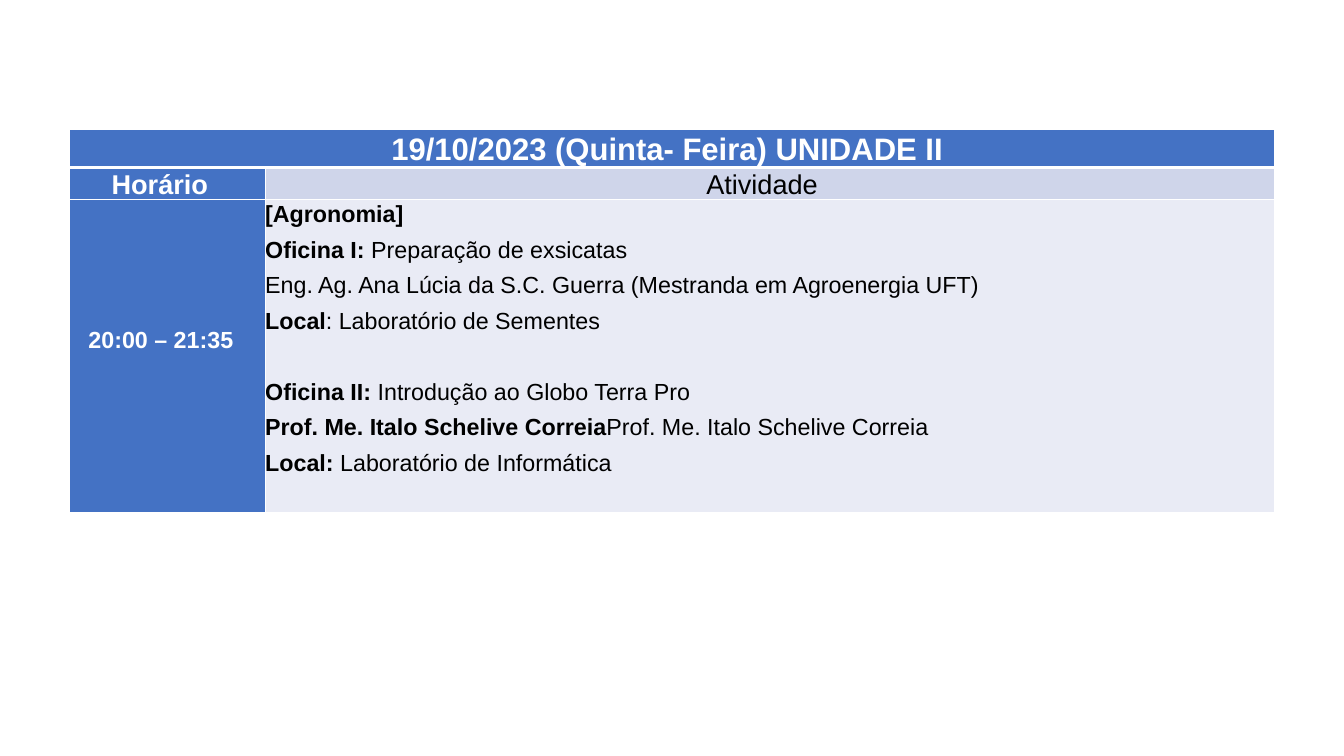
import dataclasses

import pptx
import pptx.dml.color
import pptx.enum.text
import pptx.oxml
import pptx.oxml.ns
import pptx.table
import pptx.util

Inches = pptx.util.Inches
Align = pptx.enum.text.PP_ALIGN
Anchor = pptx.enum.text.MSO_ANCHOR
HUES = {"white": "FFFFFF", "black": "000000", "blue": "4472C4",
        "mist": "CFD5EA", "pale": "E9EBF5"}
WIDTHS = (2.8, 14.46)
HEIGHTS = (0.54, 0.45, 4.47)


@dataclasses.dataclass
class Line:
    lead: str = ""
    rest: str = ""
    gap: float = 0


@dataclasses.dataclass
class Box:
    row: int
    col: int
    fill: str
    ink: str
    size: int
    lines: list[Line]
    align: Align = Align.CENTER
    anchor: Anchor = Anchor.TOP
    right: float = 0
    foot: float = 0


BOXES = [
    Box(0, 0, "blue", "white", 32, [Line("19/10/2023 (Quinta- Feira) UNIDADE II")], right=0.13),
    Box(1, 0, "blue", "white", 28, [Line("Horário")], right=0.22),
    Box(1, 1, "mist", "black", 28, [Line(rest="Atividade")], right=0.22),
    Box(2, 0, "blue", "white", 24, [Line("20:00 – 21:35")],
        anchor=Anchor.MIDDLE, right=0.19, foot=0.48),
    Box(2, 1, "pale", "black", 24, [
        Line("[Agronomia]"),
        Line("Oficina I: ", "Preparação de exsicatas"),
        Line(rest="Eng. Ag. Ana Lúcia da S.C. Guerra (Mestranda em Agroenergia UFT)"),
        Line("Local", ": Laboratório de Sementes"),
        Line("Oficina II: ", "Introdução ao Globo Terra Pro", gap=36.6),
        Line("Prof. Me. Italo Schelive Correia".join(("", "")), "Prof. Me. Italo Schelive Correia"),
        Line("Local: ", "Laboratório de Informática"),
    ], align=Align.LEFT),
]


def tint(name: str) -> pptx.dml.color.RGBColor:
    """Return the named colour."""
    return pptx.dml.color.RGBColor.from_string(HUES[name])


def edge(cell: pptx.table._Cell, row: int) -> None:
    """Draw white borders, thick under the heading row."""
    props = cell._tc.get_or_add_tcPr()
    sides = {"L": 1, "R": 1, "T": 3 if row == 1 else 1, "B": 3 if row == 0 else 1}
    for spot, (side, width) in enumerate(sides.items()):
        props.insert(spot, pptx.oxml.parse_xml(
            f'<a:ln{side} {pptx.oxml.ns.nsdecls("a")} w="{pptx.util.Pt(width)}">'
            f'<a:solidFill><a:srgbClr val="{HUES["white"]}"/></a:solidFill></a:ln{side}>'))


def write(cell: pptx.table._Cell, box: Box) -> None:
    """Fill a cell with its colour and lines of text."""
    cell.fill.solid()
    cell.fill.fore_color.rgb = tint(box.fill)
    cell.margin_left = cell.margin_top = 0
    cell.margin_right, cell.margin_bottom = Inches(box.right), Inches(box.foot)
    cell.vertical_anchor = box.anchor
    frame = cell.text_frame
    for spot, line in enumerate(box.lines):
        para = frame.add_paragraph() if spot else frame.paragraphs[0]
        para.alignment = box.align
        para.line_spacing = 1.07
        para.space_before, para.space_after = pptx.util.Pt(line.gap), pptx.util.Pt(8)
        font = para.font
        font.name, font.size = "Arial", pptx.util.Pt(box.size)
        font.color.rgb = tint(box.ink)
        font.bold = not line.rest
        for text, bold in ((line.lead, True), (line.rest, False)):
            if text:
                run = para.add_run()
                run.text = text
                if line.lead and line.rest:
                    run.font.bold = bold


def main() -> None:
    """Build the timetable slide."""
    deck = pptx.Presentation()
    deck.slide_width, deck.slide_height = Inches(19.26), Inches(10.83)
    slide = deck.slides.add_slide(deck.slide_layouts[6])
    table = slide.shapes.add_table(
        len(HEIGHTS), len(WIDTHS), Inches(1), Inches(1.86),
        Inches(sum(WIDTHS)), Inches(sum(HEIGHTS))).table
    table.first_row = table.horz_banding = False
    for col, width in zip(table.columns, WIDTHS):
        col.width = Inches(width)
    for row, height in zip(table.rows, HEIGHTS):
        row.height = Inches(height)
    table.cell(0, 0).merge(table.cell(0, 1))
    for box in BOXES:
        write(table.cell(box.row, box.col), box)
    for row in range(len(HEIGHTS)):
        for col in range(len(WIDTHS)):
            edge(table.cell(row, col), row)
    deck.save("out.pptx")


if __name__ == "__main__":
    main()
